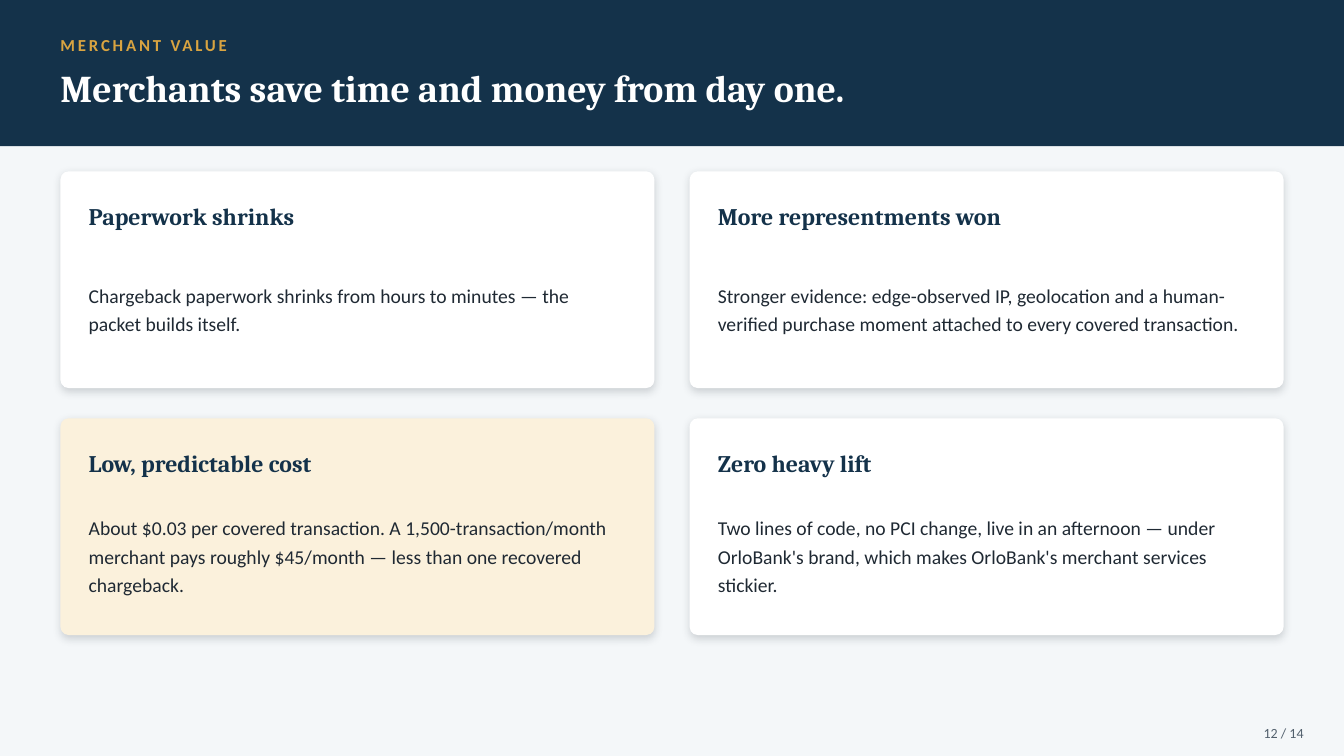
from lxml import etree
from pptx import Presentation
from pptx.dml.color import RGBColor
from pptx.enum.shapes import MSO_SHAPE as Shape
from pptx.enum.text import MSO_ANCHOR as Anchor, MSO_AUTO_SIZE as AutoSize, PP_ALIGN as Align
from pptx.oxml.ns import qn
from pptx.util import Inches, Pt

NAVY, GOLD, INK, GREY = "14324A", "D9A441", "1F2933", "52606D"
WHITE, CREAM, MIST = "FFFFFF", "FBF1DC", "F4F7F9"
SERIF, SANS = "Cambria", "Calibri"
WIDTH, HEIGHT, MARGIN = 13.33, 7.5, 0.6

CARDS = [
    ("Paperwork shrinks", WHITE,
     "Chargeback paperwork shrinks from hours to minutes — the packet builds itself."),
    ("More representments won", WHITE,
     "Stronger evidence: edge-observed IP, geolocation and a human-verified purchase "
     "moment attached to every covered transaction."),
    ("Low, predictable cost", CREAM,
     "About $0.03 per covered transaction. A 1,500-transaction/month merchant pays "
     "roughly $45/month — less than one recovered chargeback."),
    ("Zero heavy lift", WHITE,
     "Two lines of code, no PCI change, live in an afternoon — under OrloBank's brand, "
     "which makes OrloBank's merchant services stickier."),
]


def rgb(color):
    return RGBColor.from_string(color)


def write(holder, text, size, font, color, bold=False, spacing=None,
          anchor=Anchor.MIDDLE, align=Align.LEFT):
    """Fill a text box or placeholder with one formatted paragraph."""
    frame = holder.text_frame
    frame.text = text
    frame.word_wrap = True
    frame.auto_size = AutoSize.NONE
    frame.vertical_anchor = anchor
    frame.margin_left = frame.margin_right = frame.margin_top = frame.margin_bottom = 0
    paragraph = frame.paragraphs[0]
    paragraph.alignment = align
    if spacing:
        paragraph.line_spacing = spacing
    run = paragraph.runs[0]
    run.font.size, run.font.name, run.font.bold = Pt(size), font, bold
    run.font.color.rgb = rgb(color)
    return run


def add_text(slide, left, top, width, height, *args, **options):
    box = slide.shapes.add_textbox(Inches(left), Inches(top), Inches(width), Inches(height))
    return write(box, *args, **options)


def add_panel(slide, kind, left, top, width, height, color):
    panel = slide.shapes.add_shape(kind, Inches(left), Inches(top), Inches(width), Inches(height))
    panel.fill.solid()
    panel.fill.fore_color.rgb = rgb(color)
    panel.line.fill.background()
    panel.shadow.inherit = False
    return panel


def add_soft_shadow(panel):
    effects = panel._element.spPr.find(qn("a:effectLst"))
    shadow = etree.SubElement(effects, qn("a:outerShdw"), blurRad=str(Pt(6)), dist=str(Pt(2)),
                              dir=str(90 * 60000), algn="ctr", rotWithShape="0")
    tint = etree.SubElement(shadow, qn("a:srgbClr"), val=INK)
    etree.SubElement(tint, qn("a:alpha"), val="18000")


def add_header(slide, left, top, width, height):
    band = add_panel(slide, Shape.RECTANGLE, left, top, width, height, NAVY)
    text_left, text_width = left + MARGIN, width - 2 * MARGIN
    kicker = add_text(slide, text_left, top + 0.28, text_width, 0.32,
                      "MERCHANT VALUE", 12, SANS, GOLD, bold=True)
    kicker.font._element.set("spc", "200")

    title = slide.shapes.title
    title.left, title.top = Inches(text_left), Inches(top + 0.62)
    title.width, title.height = Inches(text_width), Inches(0.78)
    write(title, "Merchants save time and money from day one.", 27, SERIF, WHITE,
          bold=True, spacing=1.05, anchor=Anchor.TOP)
    # The band goes behind the title
    title._element.addprevious(band._element)


def add_card(slide, left, top, width, height, heading, color, body):
    card = add_panel(slide, Shape.ROUNDED_RECTANGLE, left, top, width, height, color)
    card.adjustments[0] = 0.08 / height
    add_soft_shadow(card)
    pad = 0.28
    inner = width - 2 * pad
    add_text(slide, left + pad, top + 0.22, inner, 0.45, heading, 17, SERIF, NAVY, bold=True)
    add_text(slide, left + pad, top + 0.72, inner, height - 0.9, body, 14, SANS, INK, spacing=1.2)


def add_card_grid(slide, left, top, width, height, columns=2, gap_x=0.35, gap_y=0.3):
    rows = len(CARDS) // columns
    card_width = (width - gap_x * (columns - 1)) / columns
    card_height = (height - gap_y * (rows - 1)) / rows
    for index, card in enumerate(CARDS):
        row, column = divmod(index, columns)
        add_card(slide, left + column * (card_width + gap_x), top + row * (card_height + gap_y),
                 card_width, card_height, *card)


def add_page_number(slide, left, top, width, height):
    add_text(slide, left, top, width, height, "12 / 14", 10, SANS, GREY, align=Align.RIGHT)


def main():
    deck = Presentation()
    deck.slide_width, deck.slide_height = Inches(WIDTH), Inches(HEIGHT)
    slide = deck.slides.add_slide(deck.slide_layouts[5])
    slide.background.fill.solid()
    slide.background.fill.fore_color.rgb = rgb(MIST)

    add_header(slide, 0, 0, WIDTH, 1.45)
    add_card_grid(slide, MARGIN, 1.7, WIDTH - 2 * MARGIN, 4.6)
    add_page_number(slide, 11.73, 7.12, 1.2, 0.3)
    deck.save("out.pptx")


if __name__ == "__main__":
    main()
